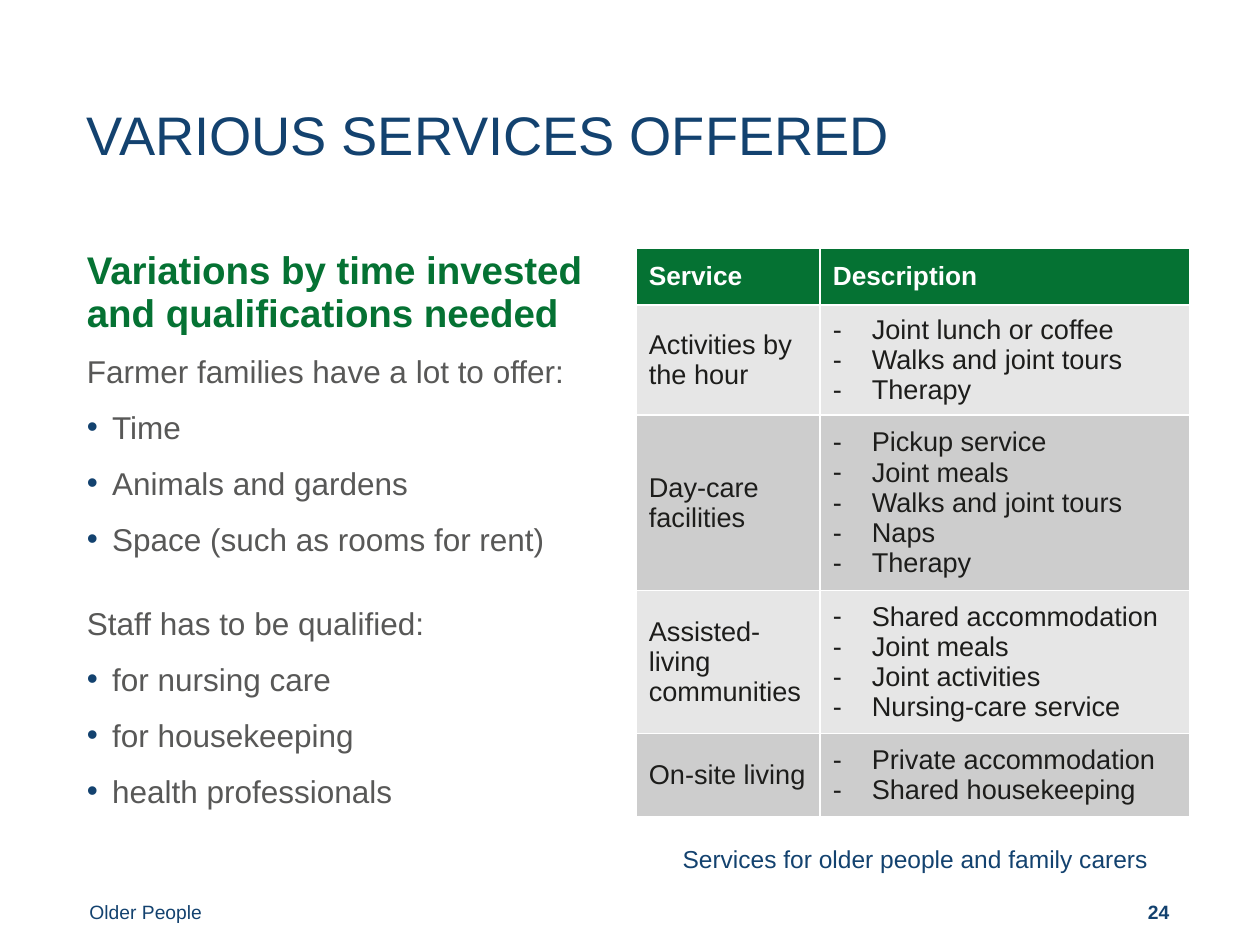
from lxml.etree import SubElement
from pptx import Presentation
from pptx.dml.color import RGBColor
from pptx.enum.text import MSO_ANCHOR, PP_ALIGN
from pptx.oxml.ns import qn
from pptx.util import Inches, Pt

NAVY, GREEN, GREY, INK, WHITE = "13426F", "057233", "585857", "1D1D1B", "FFFFFF"
BANDS = ("E6E6E6", "CDCDCD")

OFFERS = [
    ("Farmer families have a lot to offer:",
     ["Time", "Animals and gardens", "Space (such as rooms for rent)"]),
    ("Staff has to be qualified:",
     ["for nursing care", "for housekeeping", "health professionals"]),
]
ROWS = [
    ("Activities by the hour", 0.84,
     ["Joint lunch or coffee", "Walks and joint tours", "Therapy"]),
    ("Day-care facilities", 1.33,
     ["Pickup service", "Joint meals", "Walks and joint tours", "Naps", "Therapy"]),
    ("Assisted-living communities", 1.09,
     ["Shared accommodation", "Joint meals", "Joint activities", "Nursing-care service"]),
    ("On-site living", 0.66,
     ["Private accommodation", "Shared housekeeping"]),
]


def color(code):
    """Turn a hex string into a colour."""
    return RGBColor.from_string(code)


class Deck:
    """Holds the style and the current slide."""

    def __init__(self, font="Arial"):
        """Start a deck with one blank slide."""
        self.font = font
        self.file = Presentation()
        self.file.slide_width, self.file.slide_height = Inches(10), Inches(7.5)
        self.slide = self.file.slides.add_slide(self.file.slide_layouts[6])

    def style(self, para, text, size, ink, bold=False, lead=None, gap=0):
        """Fill a paragraph and set its font and spacing."""
        para.text = text
        font = para.font
        font.name, font.size, font.bold = self.font, Pt(size), bold
        font.color.rgb = color(ink)
        para.space_before = Pt(gap)
        if lead:
            para.line_spacing = Pt(lead)

    def bullet(self, para, sign, indent, ink=None):
        """Give a paragraph a hanging bullet."""
        props = para._p.get_or_add_pPr()
        props.set("marL", str(Inches(indent)))
        props.set("indent", str(-Inches(indent)))
        if ink:
            SubElement(SubElement(props, qn("a:buClr")), qn("a:srgbClr"), val=ink)
        SubElement(props, qn("a:buFont"), typeface=self.font)
        SubElement(props, qn("a:buChar"), char=sign)

    def frame(self, box, inset, anchor=MSO_ANCHOR.TOP):
        """Add an empty wrapping text box and return its frame."""
        frame = self.slide.shapes.add_textbox(*map(Inches, box)).text_frame
        frame.word_wrap = True
        frame.vertical_anchor = anchor
        (frame.margin_left, frame.margin_top,
         frame.margin_right, frame.margin_bottom) = map(Inches, inset)
        return frame

    def label(self, box, inset, text, size, ink, lead, bold=False,
              anchor=MSO_ANCHOR.TOP, align=PP_ALIGN.LEFT):
        """Add a text box of one paragraph."""
        para = self.frame(box, inset, anchor).paragraphs[0]
        para.alignment = align
        self.style(para, text, size, ink, bold, lead)

    def outline(self, box, inset, groups):
        """Add headed bullet lists in one text box."""
        frame = self.frame(box, inset)
        for spot, (head, items) in enumerate(groups):
            para = frame.add_paragraph() if spot else frame.paragraphs[0]
            self.style(para, head, 18, GREY, lead=24, gap=24 if spot else 0)
            for item in items:
                para = frame.add_paragraph()
                self.bullet(para, "•", 0.2, NAVY)
                self.style(para, item, 18, GREY, lead=24, gap=8)

    def cell(self, cell, lines, size, ink, fill, bold=False, sign=None):
        """Fill one table cell and draw its borders."""
        cell.vertical_anchor = MSO_ANCHOR.MIDDLE
        props = cell._tc.get_or_add_tcPr()
        for side in ("lnL", "lnR", "lnT", "lnB"):
            line = SubElement(props, qn(f"a:{side}"), w=str(Pt(1)))
            SubElement(SubElement(line, qn("a:solidFill")), qn("a:srgbClr"), val=WHITE)
        cell.fill.solid()
        cell.fill.fore_color.rgb = color(fill)
        frame = cell.text_frame
        for spot, text in enumerate(lines):
            para = frame.add_paragraph() if spot else frame.paragraphs[0]
            if sign:
                self.bullet(para, sign, 0.31)
            self.style(para, text, size, ink, bold)

    def table(self, left, top, widths, heads, rows):
        """Add the table of services."""
        highs = [0.45] + [high for _, high, _ in rows]
        box = (left, top, sum(widths), sum(highs))
        table = self.slide.shapes.add_table(
            len(highs), len(widths), *map(Inches, box)).table
        table.horz_banding = False
        for col, wide in zip(table.columns, widths):
            col.width = Inches(wide)
        for row, high in zip(table.rows, highs):
            row.height = Inches(high)
        for col, head in enumerate(heads):
            self.cell(table.cell(0, col), [head], 15, WHITE, GREEN, bold=True)
        for row, (name, _, items) in enumerate(rows, 1):
            fill = BANDS[(row - 1) % 2]
            self.cell(table.cell(row, 0), [name], 15.5, INK, fill)
            self.cell(table.cell(row, 1), items, 15.5, INK, fill, sign="-")


def main():
    """Build the slide and save it."""
    deck = Deck()
    deck.label((0.69, 0.73, 8.64, 0.71), (0, 0.05, 0.1, 0.05),
               "VARIOUS SERVICES OFFERED", 31, NAVY, 34, anchor=MSO_ANCHOR.MIDDLE)
    deck.label((0.69, 1.92, 4.24, 0.81), (0, 0.05, 0.1, 0.05),
               "Variations by time invested and qualifications needed",
               22, GREEN, 25, bold=True)
    deck.outline((0.69, 2.74, 4.24, 4.03), (0, 0.02, 0.1, 0.05), OFFERS)
    deck.table(5.05, 1.97, (1.46, 2.93), ("Service", "Description"), ROWS)
    deck.label((0, 6.89, 3.38, 0.6), (0.71, 0.05, 0, 0.16),
               "Older People", 11, NAVY, 13.3, anchor=MSO_ANCHOR.BOTTOM)
    deck.label((7.74, 6.89, 2.25, 0.6), (0, 0.05, 0.71, 0.16), "24", 11, NAVY, 13.3,
               bold=True, anchor=MSO_ANCHOR.BOTTOM, align=PP_ALIGN.RIGHT)
    deck.label((5.05, 6.62, 4.39, 0.36), (0.04, 0.05, 0, 0),
               "Services for older people and family carers", 14, NAVY, 19,
               align=PP_ALIGN.CENTER)
    deck.file.save("out.pptx")


if __name__ == "__main__":
    main()
